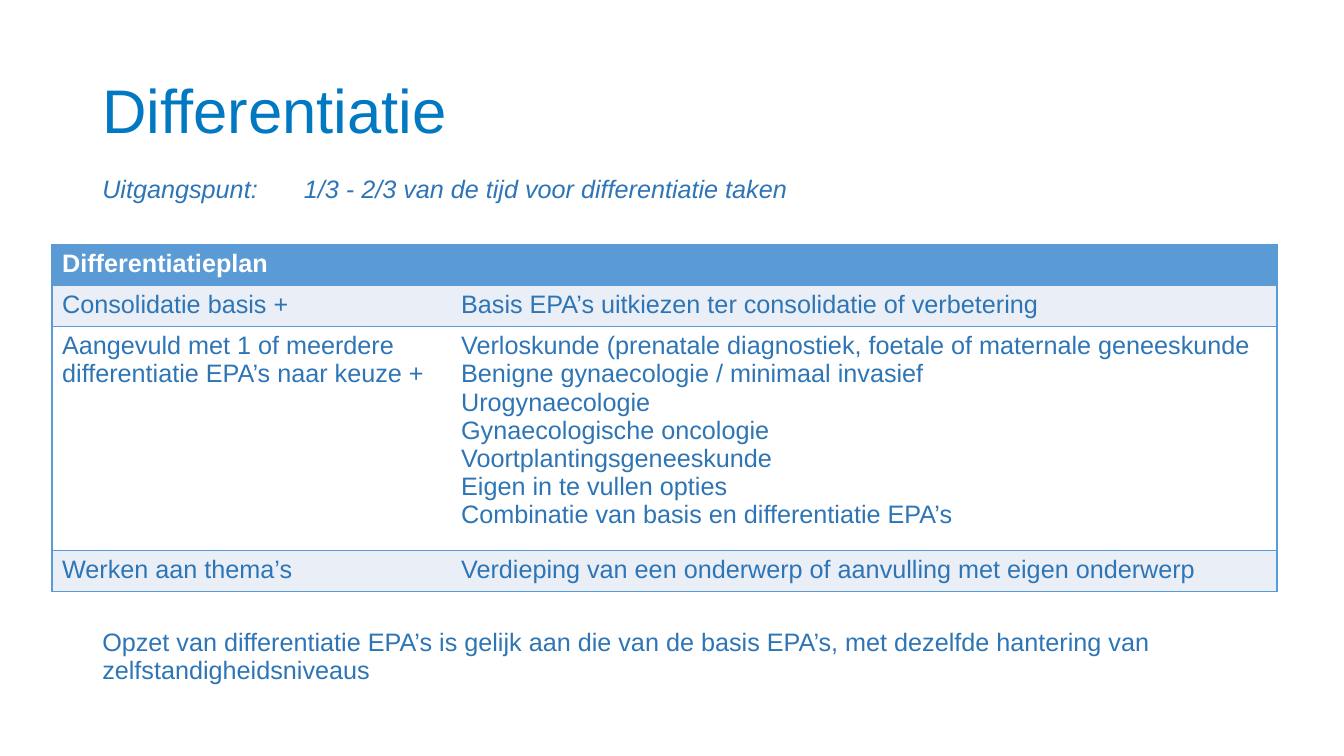
"""Build the slide on the differentiation plan."""
from lxml.etree import SubElement
from pptx import Presentation
from pptx.dml.color import RGBColor
from pptx.enum.text import MSO_ANCHOR
from pptx.oxml.ns import qn
from pptx.util import Pt

HUES = {
    "title": "0079C2",
    "text": "2E75B6",
    "head": "5B9BD5",
    "band": "EAEFF7",
    "white": "FFFFFF",
}

PLAN = [
    ("Differentiatieplan", ""),
    ("Consolidatie basis +",
     "Basis EPA’s uitkiezen ter consolidatie of verbetering"),
    ("Aangevuld met 1 of meerdere differentiatie EPA’s naar keuze +",
     "Verloskunde (prenatale diagnostiek, foetale of maternale geneeskunde\n"
     "Benigne gynaecologie / minimaal invasief\n"
     "Urogynaecologie\n"
     "Gynaecologische oncologie\n"
     "Voortplantingsgeneeskunde\n"
     "Eigen in te vullen opties\n"
     "Combinatie van basis en differentiatie EPA’s"),
    ("Werken aan thema’s",
     "Verdieping van een onderwerp of aanvulling met eigen onderwerp"),
]


class Deck:
    def __init__(self, wide, high):
        self.file = Presentation()
        self.file.slide_width = Pt(wide)
        self.file.slide_height = Pt(high)
        self.slide = self.file.slides.add_slide(self.file.slide_layouts[6])
        self.font = "Arial"

    def style(self, frame, size, hue, bold=False, slant=False, pitch=None):
        for para in frame.paragraphs:
            para.line_spacing = pitch
            for font in [para.font] + [run.font for run in para.runs]:
                font.name = self.font
                font.size = Pt(size)
                font.bold = bold
                font.italic = slant
                font.color.rgb = RGBColor.from_string(HUES[hue])

    def text(self, words, left, top, wide, high, size, hue, slant=False,
             anchor=MSO_ANCHOR.TOP):
        box = self.slide.shapes.add_textbox(Pt(left), Pt(top), Pt(wide), Pt(high))
        frame = box.text_frame
        frame.word_wrap = True
        frame.vertical_anchor = anchor
        frame.text = words
        self.style(frame, size, hue, slant=slant, pitch=0.9)

    def edges(self, cell, shown):
        props = cell._tc.get_or_add_tcPr()
        for spot, side in enumerate("LRTB"):
            line = SubElement(props, qn(f"a:ln{side}"), w=str(Pt(1)))
            if side in shown:
                fill = SubElement(line, qn("a:solidFill"))
                SubElement(fill, qn("a:srgbClr"), val=HUES["head"])
            else:
                SubElement(line, qn("a:noFill"))
            props.insert(spot, line)

    def table(self, rows, left, top, cols, highs):
        frame = self.slide.shapes.add_table(
            len(rows), len(cols), Pt(left), Pt(top), Pt(sum(cols)), Pt(sum(highs)))
        grid = frame.table
        grid.horz_banding = False
        for col, wide in zip(grid.columns, cols):
            col.width = Pt(wide)
        for r, (words, high) in enumerate(zip(rows, highs)):
            grid.rows[r].height = Pt(high)
            head = r == 0
            back = "head" if head else "band" if r % 2 else "white"
            for c, word in enumerate(words):
                cell = grid.cell(r, c)
                cell.text_frame.text = word
                self.style(cell.text_frame, 18, "white" if head else "text", head)
                cell.fill.solid()
                cell.fill.fore_color.rgb = RGBColor.from_string(HUES[back])
                self.edges(cell, "TBR" if c else "TBL")


def main():
    deck = Deck(960, 540)
    deck.text("Differentiatie", 66, 28.8, 828, 104.4, 44, "title",
              anchor=MSO_ANCHOR.MIDDLE)
    deck.text("Uitgangspunt: \t1/3 - 2/3 van de tijd voor differentiatie taken",
              66, 123, 791, 30, 18, "text", slant=True)
    deck.table(PLAN, 37.2, 175, [285, 590], [29.2, 29.2, 159.8, 29.2])
    deck.text("Opzet van differentiatie EPA’s is gelijk aan die van de basis EPA’s, "
              "met dezelfde hantering van zelfstandigheidsniveaus",
              66, 446.5, 791, 50, 18, "text")
    deck.file.save("out.pptx")


if __name__ == "__main__":
    main()
